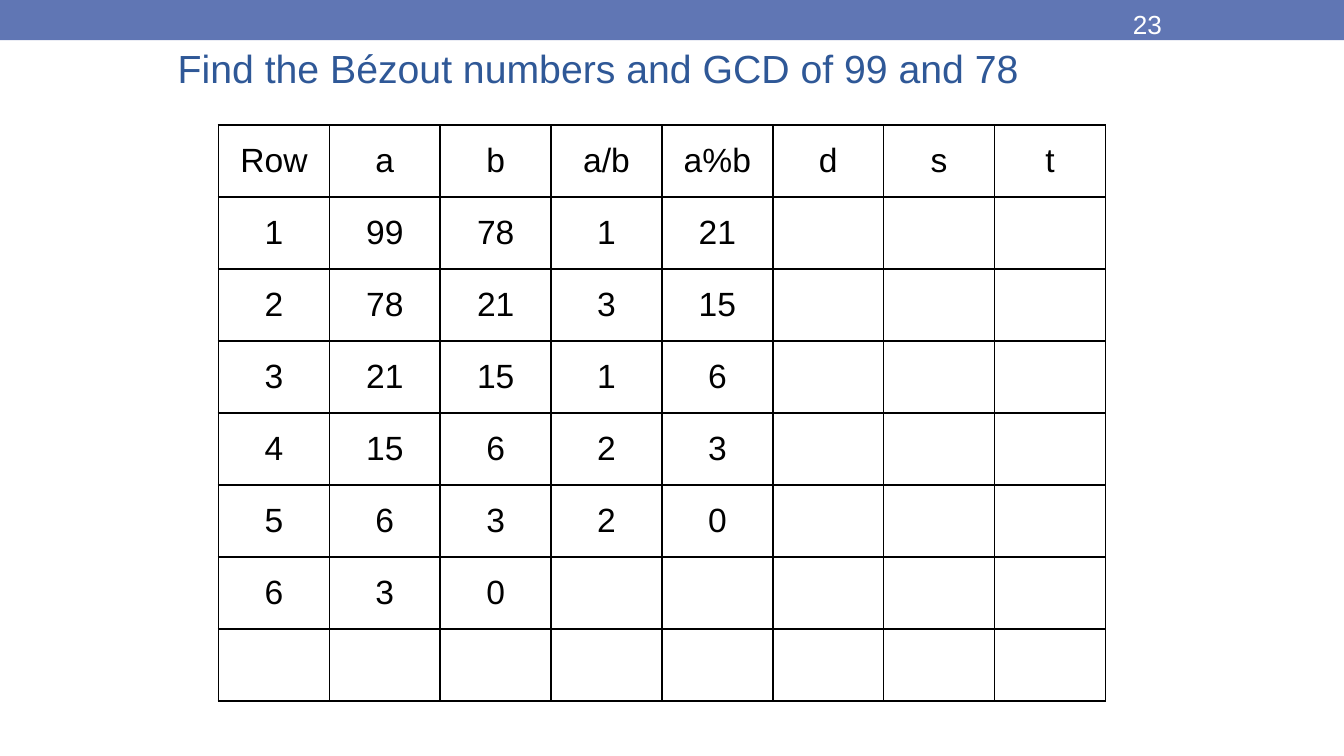
from dataclasses import dataclass

from lxml.etree import SubElement
from pptx import Presentation
from pptx.dml.color import RGBColor
from pptx.enum.shapes import MSO_SHAPE
from pptx.enum.text import MSO_ANCHOR, PP_ALIGN
from pptx.oxml.ns import qn
from pptx.slide import Slide
from pptx.table import _Cell
from pptx.util import Cm, Pt

BAND_BLUE = RGBColor(0x60, 0x76, 0xB4)
TITLE_BLUE = RGBColor(0x2F, 0x58, 0x97)
BLACK = RGBColor(0, 0, 0)
WHITE = RGBColor(0xFF, 0xFF, 0xFF)
FONT = "Arial"

EUCLID_ROWS = [
    ("Row", "a", "b", "a/b", "a%b", "d", "s", "t"),
    ("1", "99", "78", "1", "21"),
    ("2", "78", "21", "3", "15"),
    ("3", "21", "15", "1", "6"),
    ("4", "15", "6", "2", "3"),
    ("5", "6", "3", "2", "0"),
    ("6", "3", "0"),
    (),
]


@dataclass(frozen=True)
class Label:
    text: str
    left: float
    top: float
    width: float
    height: float
    size: int
    color: RGBColor
    anchor: MSO_ANCHOR
    inset_x: float
    inset_y: float


LABELS = [
    Label("Find the Bézout numbers and GCD of 99 and 78",
          3.18, 0, 19.05, 1.9, 21, TITLE_BLUE, MSO_ANCHOR.BOTTOM, 0.18, 0.18),
    Label("23", 21.16, 0.03, 2.97, 0.69, 14, WHITE, MSO_ANCHOR.TOP, 0.25, 0.13),
]


def add_band(slide: Slide, width: int) -> None:
    band = slide.shapes.add_shape(MSO_SHAPE.RECTANGLE, 0, 0, width, Cm(0.76))
    band.shadow.inherit = False
    band.fill.solid()
    band.fill.fore_color.rgb = BAND_BLUE
    band.line.fill.background()


def add_label(slide: Slide, label: Label) -> None:
    box = slide.shapes.add_textbox(
        Cm(label.left), Cm(label.top), Cm(label.width), Cm(label.height))
    frame = box.text_frame
    frame.word_wrap = True
    frame.vertical_anchor = label.anchor
    frame.margin_left = frame.margin_right = Cm(label.inset_x)
    frame.margin_top = frame.margin_bottom = Cm(label.inset_y)
    frame.text = label.text
    font = frame.paragraphs[0].runs[0].font
    font.name, font.size, font.color.rgb = FONT, Pt(label.size), label.color


def add_borders(cell: _Cell) -> None:
    properties = cell._tc.get_or_add_tcPr()
    for side in ("a:lnL", "a:lnR", "a:lnT", "a:lnB"):
        border = SubElement(properties, qn(side), w=str(Pt(1)))
        fill = SubElement(border, qn("a:solidFill"))
        SubElement(fill, qn("a:srgbClr"), val=str(BLACK))


def fill_cell(cell: _Cell, text: str) -> None:
    add_borders(cell)
    cell.fill.background()
    cell.vertical_anchor = MSO_ANCHOR.MIDDLE
    cell.margin_left = cell.margin_right = Cm(0.2)
    cell.margin_top = cell.margin_bottom = Cm(0.1)
    cell.text_frame.text = text
    paragraph = cell.text_frame.paragraphs[0]
    paragraph.alignment = PP_ALIGN.CENTER
    for run in paragraph.runs:
        run.font.name, run.font.size = FONT, Pt(18)
        run.font.color.rgb = BLACK


def add_euclid_table(slide: Slide) -> None:
    row_count, column_count = len(EUCLID_ROWS), len(EUCLID_ROWS[0])
    table = slide.shapes.add_table(
        row_count, column_count, Cm(4.13), Cm(2.36), Cm(16.76), Cm(10.89)).table
    table.first_row = table.horz_banding = False
    for row, values in enumerate(EUCLID_ROWS):
        for column in range(column_count):
            text = values[column] if column < len(values) else ""
            fill_cell(table.cell(row, column), text)


def main() -> None:
    presentation = Presentation()
    presentation.slide_width = Cm(25.4)
    presentation.slide_height = Cm(14.29)
    slide = presentation.slides.add_slide(presentation.slide_layouts[6])
    add_band(slide, presentation.slide_width)
    add_euclid_table(slide)
    for label in LABELS:
        add_label(slide, label)
    presentation.save("out.pptx")


if __name__ == "__main__":
    main()
